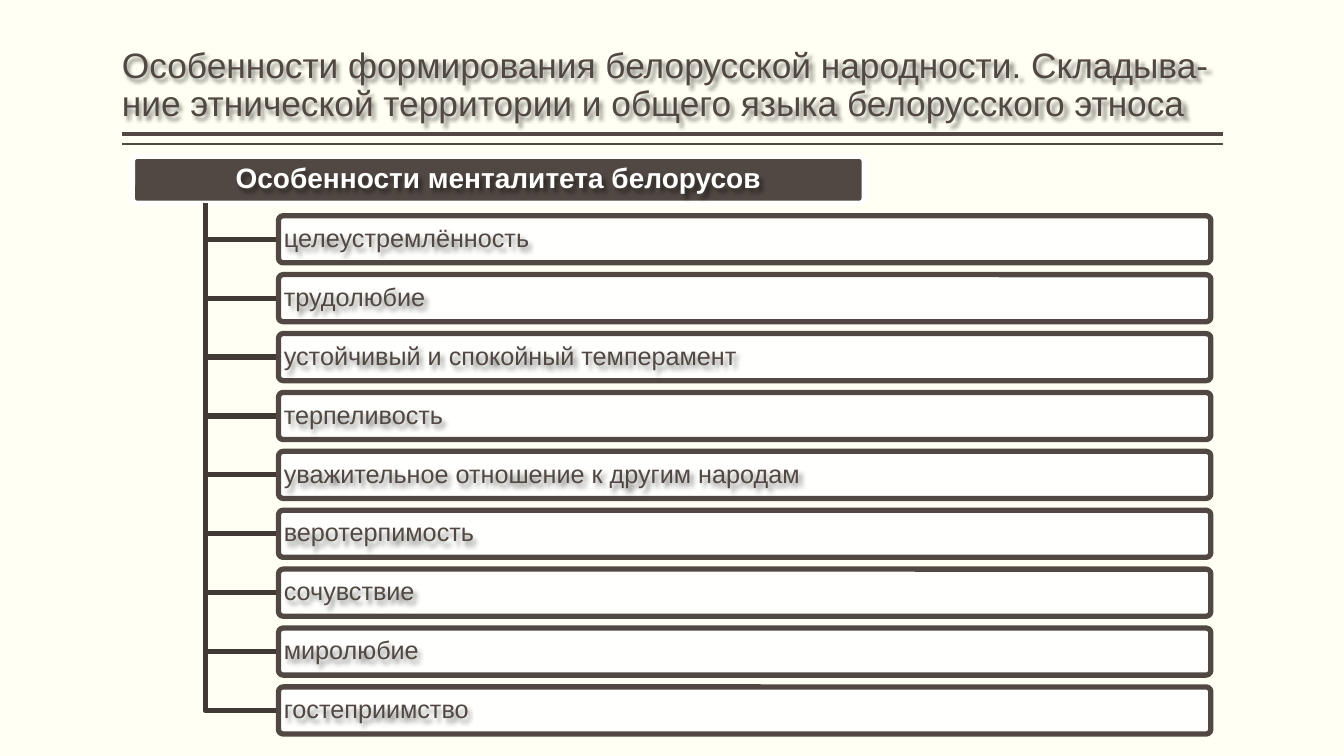
from lxml import etree
from pptx import Presentation
from pptx.dml.color import RGBColor
from pptx.enum.shapes import MSO_CONNECTOR, MSO_SHAPE
from pptx.enum.text import MSO_ANCHOR, MSO_AUTO_SIZE, PP_ALIGN
from pptx.oxml.ns import qn
from pptx.util import Pt

STRAIGHT = MSO_CONNECTOR.STRAIGHT
ROUNDED = MSO_SHAPE.ROUNDED_RECTANGLE
MIDDLE, BOTTOM = MSO_ANCHOR.MIDDLE, MSO_ANCHOR.BOTTOM
NO_FIT = MSO_AUTO_SIZE.NONE
LEFT, CENTER = PP_ALIGN.LEFT, PP_ALIGN.CENTER

CREAM = RGBColor(0xFF, 0xFF, 0xF3)
WHITE = RGBColor(0xFF, 0xFF, 0xFF)
BROWN = RGBColor(0x51, 0x48, 0x43)
DARK_BROWN = RGBColor(0x40, 0x39, 0x34)
BLACK = RGBColor(0, 0, 0)

TITLE = ("Особенности формирования белорусской народности. Складыва- ние "
         "этнической территории и общего языка белорусского этноса")
HEADING = "Особенности менталитета белорусов"
TRAITS = [
    "целеустремлённость",
    "трудолюбие",
    "устойчивый и спокойный темперамент",
    "терпеливость",
    "уважительное отношение к другим народам",
    "веротерпимость",
    "сочувствие",
    "миролюбие",
    "гостеприимство",
]

RULE_LEFT, RULE_RIGHT = 87.1, 873.4
BORDER = 3.78
BOX_HEIGHT = 33.66
TEXT_OFFSET = 1
TRUNK_X, TRUNK_TOP = 146.55, 145.2
TRAIT_LEFT, TRAIT_TOP, TRAIT_WIDTH, TRAIT_PITCH = 198.9, 154.1, 666, 42.07


class SlideBuilder:
    font_name = "Arial"
    line_spacing = 0.9

    def __init__(self, page):
        self.page = page
        fill = page.background.fill
        fill.solid()
        fill.fore_color.rgb = CREAM

    def set_line(self, shape, color, width):
        shape.line.color.rgb = color
        shape.line.width = Pt(width)

    def set_alpha(self, color_element, percent):
        etree.SubElement(color_element, qn("a:alpha"), val=str(percent * 1000))

    def add_text_shadow(self, box):
        box.fill.background()
        effects = etree.SubElement(box.element.spPr, qn("a:effectLst"))
        shadow = etree.SubElement(
            effects, qn("a:outerShdw"), blurRad=str(Pt(3)), dist=str(Pt(3)),
            dir="2700000", algn="tl", rotWithShape="0")
        color = etree.SubElement(shadow, qn("a:srgbClr"), val=str(BLACK))
        self.set_alpha(color, 43)

    def fill_text(self, box, text, size, color, bold=False, align=LEFT,
                  anchor=MIDDLE, side=2.9, edge=1.5):
        frame = box.text_frame
        frame_format = {
            "word_wrap": True, "auto_size": NO_FIT, "vertical_anchor": anchor,
            "margin_left": Pt(side), "margin_right": Pt(side),
            "margin_top": Pt(edge), "margin_bottom": Pt(edge),
        }
        for name, value in frame_format.items():
            setattr(frame, name, value)
        para = frame.paragraphs[0]
        para.alignment = align
        para.line_spacing = self.line_spacing
        para.space_before = Pt(0)
        span = para.add_run()
        span.text = text
        span_format = {"name": self.font_name, "size": Pt(size), "bold": bold}
        for name, value in span_format.items():
            setattr(span.font, name, value)
        span.font.color.rgb = color
        self.add_text_shadow(box)

    def title(self, text, left, top, width, height):
        box = self.page.shapes.title
        position = {"left": left, "top": top, "width": width, "height": height}
        for name, value in position.items():
            setattr(box, name, Pt(value))
        self.fill_text(box, text, 25.2, BROWN, anchor=BOTTOM, side=0, edge=3.6)

    def rule(self, y, width):
        line = self.page.shapes.add_connector(
            STRAIGHT, Pt(RULE_RIGHT), Pt(y), Pt(RULE_LEFT), Pt(y))
        self.set_line(line, BROWN, width)
        etree.SubElement(line.element.spPr, qn("a:effectLst"))

    def panel(self, left, top, width, fill, border, opacity=100):
        box = self.page.shapes.add_shape(
            ROUNDED, Pt(left), Pt(top), Pt(width), Pt(BOX_HEIGHT))
        box.adjustments[0] = 0.1
        box.shadow.inherit = False
        box.fill.solid()
        box.fill.fore_color.rgb = fill
        if opacity < 100:
            color = box.element.spPr.find(qn("a:solidFill")).find(qn("a:srgbClr"))
            self.set_alpha(color, opacity)
        self.set_line(box, border, BORDER)

    def label(self, text, left, top, width, size, color, **style):
        box = self.page.shapes.add_textbox(
            Pt(left + TEXT_OFFSET), Pt(top + TEXT_OFFSET),
            Pt(width - 2 * TEXT_OFFSET), Pt(BOX_HEIGHT - 2 * TEXT_OFFSET))
        self.fill_text(box, text, size, color, **style)

    def branch(self, y):
        builder = self.page.shapes.build_freeform(Pt(TRUNK_X), Pt(TRUNK_TOP))
        corner = (Pt(TRUNK_X), Pt(y))
        builder.add_line_segments([corner, (Pt(TRAIT_LEFT), Pt(y))], close=False)
        elbow = builder.convert_to_shape()
        elbow.shadow.inherit = False
        elbow.fill.background()
        self.set_line(elbow, DARK_BROWN, BORDER)

    def heading(self, text, left, top, width):
        self.panel(left, top, width, BROWN, WHITE)
        self.label(text, left, top, width, 20, WHITE, bold=True, align=CENTER)

    def trait(self, text, top):
        self.branch(top + BOX_HEIGHT / 2)
        self.panel(TRAIT_LEFT, top, TRAIT_WIDTH, WHITE, BROWN, opacity=90)
        self.label(text, TRAIT_LEFT, top, TRAIT_WIDTH, 18, BROWN)


def main():
    deck = Presentation()
    deck.slide_width, deck.slide_height = Pt(960), Pt(540)
    title_only = deck.slide_layouts[5]
    builder = SlideBuilder(deck.slides.add_slide(title_only))
    builder.rule(95.8, 3)
    builder.rule(102.8, 1)
    builder.title(TITLE, RULE_LEFT, 5.8, RULE_RIGHT - RULE_LEFT, 86.4)
    builder.heading(HEADING, 94.6, 111.6, 522.7)
    for index, text in enumerate(TRAITS):
        builder.trait(text, TRAIT_TOP + index * TRAIT_PITCH)
    deck.save("out.pptx")


if __name__ == "__main__":
    main()
